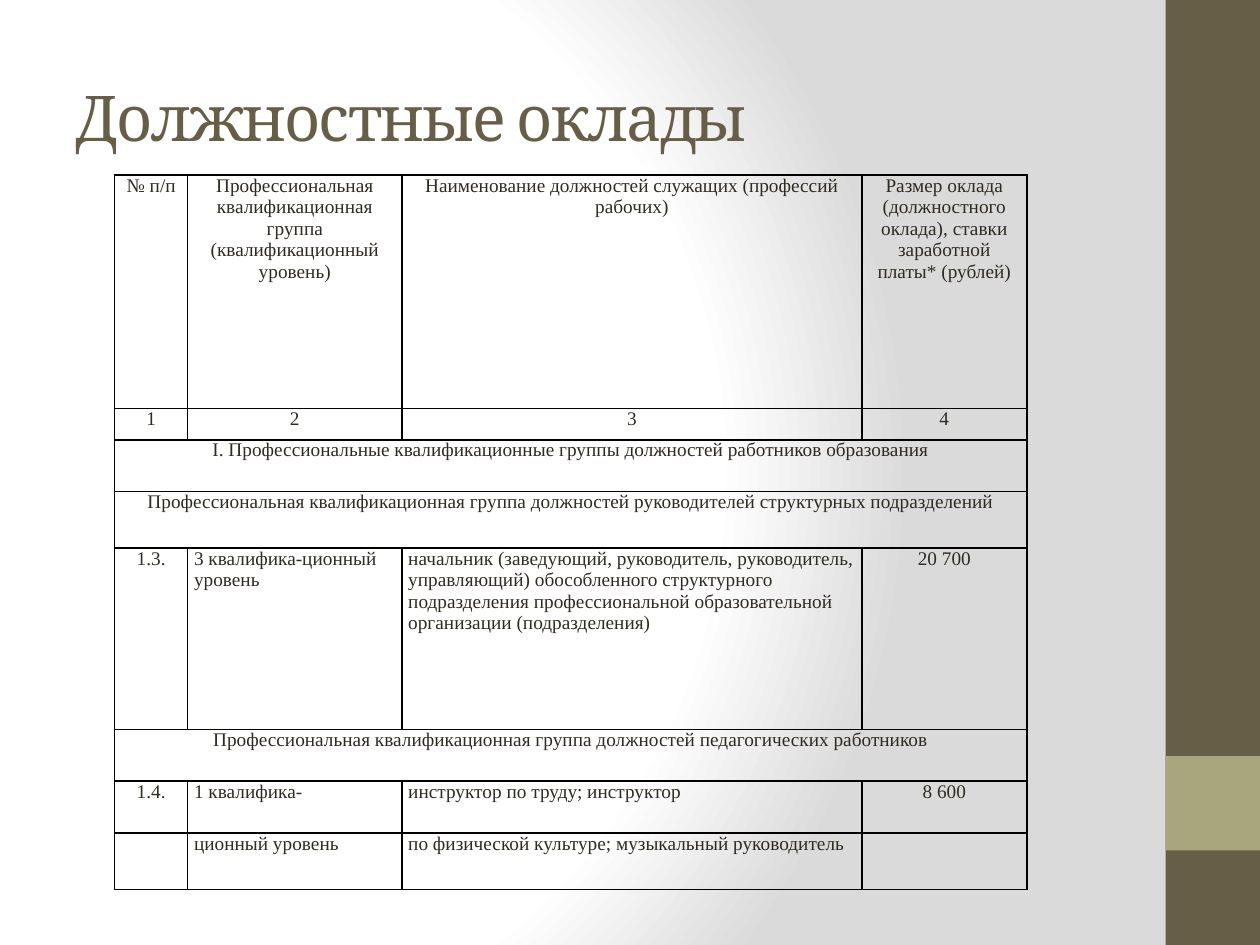
"""Build a slide with a table of official salaries."""
from lxml import etree
from pptx import Presentation
from pptx.dml.color import RGBColor
from pptx.enum import shapes, text
from pptx.oxml import parse_xml
from pptx.oxml.ns import nsdecls, qn
from pptx.util import Inches, Pt

BROWN = RGBColor(0x67, 0x5E, 0x47)
OLIVE = RGBColor(0xA9, 0xA5, 0x7C)
INK = RGBColor(0x2F, 0x2B, 0x20)
BLACK = RGBColor(0, 0, 0)
WHITE = RGBColor(0xFF, 0xFF, 0xFF)
GREY = RGBColor(0xDA, 0xDA, 0xDA)


def add_run(paragraph, words, font, size, color):
    run = paragraph.add_run()
    run.text = words
    run.font.name = font
    run.font.size = Pt(size)
    run.font.color.rgb = color
    return run


def add_borders(cell):
    properties = cell._tc.get_or_add_tcPr()
    for index, side in enumerate(("lnL", "lnR", "lnT", "lnB")):
        properties.insert(index, parse_xml(
            f'<a:{side} {nsdecls("a")} w="{Pt(1)}"><a:solidFill>'
            f'<a:srgbClr val="{BLACK}"/></a:solidFill></a:{side}>'))


prs = Presentation()
prs.slide_width, prs.slide_height = Inches(10), Inches(7.5)
slide = prs.slides.add_slide(prs.slide_layouts[6])

slide.background.fill.solid()
background = slide.element.find(".//" + qn("p:bgPr"))
stops = "".join(f'<a:gs pos="{position * 1000}"><a:srgbClr val="{color}"/></a:gs>'
                for position, color in ((0, WHITE), (75, WHITE), (100, GREY)))
background.replace(background[0], parse_xml(
    f'<a:gradFill {nsdecls("a")} rotWithShape="1"><a:gsLst>{stops}</a:gsLst>'
    '<a:path path="circle"><a:fillToRect l="20000" t="50000" r="100000" b="50000"/>'
    '</a:path></a:gradFill>'))

for top, height, color in ((0, 7.5, BROWN), (6, 0.75, OLIVE)):
    band = slide.shapes.add_shape(shapes.MSO_SHAPE.RECTANGLE, Inches(9.25),
                                  Inches(top), Inches(0.75), Inches(height))
    band.shadow.inherit = False
    band.fill.solid()
    band.fill.fore_color.rgb = color
    band.line.fill.background()

heading = slide.shapes.add_textbox(Inches(0.5), Inches(0.3), Inches(8.33), Inches(1.25)).text_frame
heading.word_wrap = True
heading.vertical_anchor = text.MSO_ANCHOR.MIDDLE
title = add_run(heading.paragraphs[0], "Должностные оклады", "Cambria", 36, BROWN)
title.font._element.set("spc", "-100")

ROWS = [
    (1.85, ["№ п/п",
            "Профессиональная квалификационная группа (квалификационный уровень)",
            "Наименование должностей служащих (профессий рабочих)",
            "Размер оклада (должностного оклада), ставки заработной платы* (рублей)"]),
    (0.25, ["1", "2", "3", "4"]),
    (0.41, ["I. Профессиональные квалификационные группы должностей работников образования"]),
    (0.45, ["Профессиональная квалификационная группа должностей руководителей "
            "структурных подразделений"]),
    (1.44, ["1.3.", "3 квалифика-ционный уровень",
            "начальник (заведующий, руководитель, руководитель, управляющий) "
            "обособленного структурного подразделения профессиональной "
            "образовательной организации (подразделения)", "20 700"]),
    (0.41, ["Профессиональная квалификационная группа должностей педагогических работников"]),
    (0.41, ["1.4.", "1 квалифика-", "инструктор по труду; инструктор", "8 600"]),
    (0.45, ["", "ционный уровень", "по физической культуре; музыкальный руководитель", ""]),
]
WIDTHS = [0.58, 1.7, 3.65, 1.31]
HEADER_ROWS = 2

salaries = slide.shapes.add_table(len(ROWS), len(WIDTHS), Inches(0.91), Inches(1.39),
                                  Inches(sum(WIDTHS)), Inches(5.67)).table
salaries.first_row = salaries.horz_banding = False
for column, width in zip(salaries.columns, WIDTHS):
    column.width = Inches(width)

for row_index, (height, entries) in enumerate(ROWS):
    salaries.rows[row_index].height = Inches(height)
    if len(entries) == 1:
        salaries.cell(row_index, 0).merge(salaries.cell(row_index, len(WIDTHS) - 1))
    for column_index in range(len(WIDTHS)):
        cell = salaries.cell(row_index, column_index)
        cell.margin_left = cell.margin_right = Inches(0.05)
        cell.margin_top = cell.margin_bottom = 0
        cell.fill.background()
        add_borders(cell)
        paragraph = cell.text_frame.paragraphs[0]
        paragraph.font.size = Pt(11)
        if row_index < HEADER_ROWS or column_index in (0, 3):
            paragraph.alignment = text.PP_ALIGN.CENTER
        if column_index < len(entries) and entries[column_index]:
            add_run(paragraph, entries[column_index], "Times New Roman", 11, INK)

prs.save("out.pptx")
